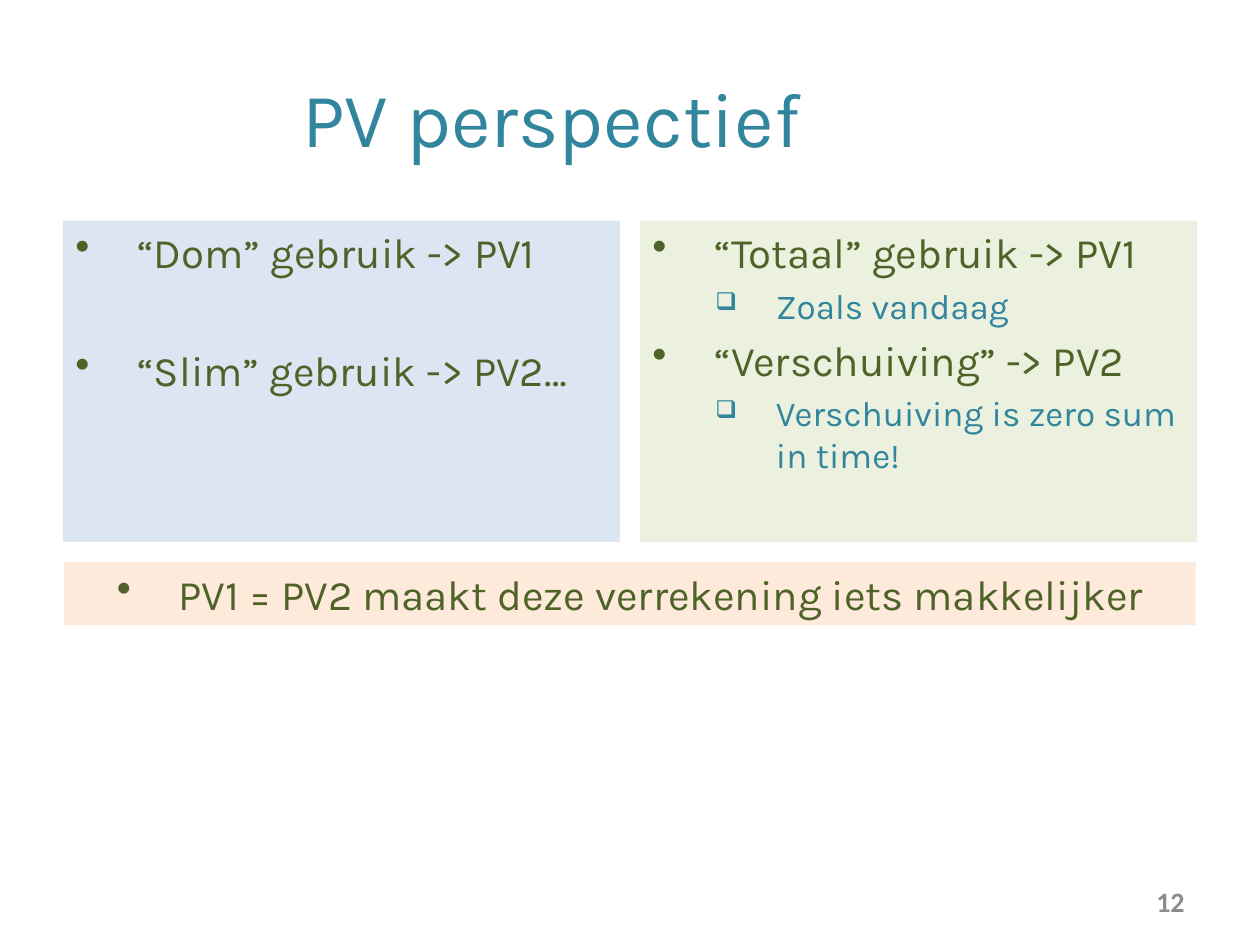
from dataclasses import dataclass

from lxml.etree import SubElement
from pptx import Presentation
from pptx.dml.color import RGBColor
from pptx.enum.shapes import MSO_SHAPE
from pptx.enum.text import MSO_ANCHOR, PP_ALIGN
from pptx.oxml.ns import qn
from pptx.util import Inches, Pt

GREEN, TEAL, GREY = "4F6228", "31859C", "8C8C8C"


@dataclass(frozen=True)
class Level:
    symbol: str
    symbol_percent: int
    left: float
    hanging: float
    size: int
    color: str


MAIN = Level("•", 100, 0.49, 0.49, 24, GREEN)
SUB = Level("❑", 70, 0.98, 0.48, 20, TEAL)


@dataclass(frozen=True)
class Item:
    text: str
    level: Level = MAIN
    space_before: float = 0.2  # in line sizes


@dataclass(frozen=True)
class Panel:
    left: float
    top: float
    width: float
    height: float
    fill: str
    items: tuple[Item, ...]
    align: PP_ALIGN = PP_ALIGN.LEFT


COLUMN_TOP, COLUMN_WIDTH, COLUMN_HEIGHT = 1.75, 4.42, 2.55
PANELS = (
    Panel(0.5, COLUMN_TOP, COLUMN_WIDTH, COLUMN_HEIGHT, "DCE6F2", (
        Item("“Dom” gebruik -> PV1"),
        Item("“Slim” gebruik -> PV2…", space_before=1.6),
    )),
    Panel(5.08, COLUMN_TOP, COLUMN_WIDTH, COLUMN_HEIGHT, "EBF1DE", (
        Item("“Totaal” gebruik -> PV1"),
        Item("Zoals vandaag", SUB),
        Item("“Verschuiving” -> PV2"),
        Item("Verschuiving is zero sum in time!", SUB),
    )),
    Panel(0.51, 4.46, 8.98, 0.5, "FDEADA", (
        Item("PV1 = PV2 maakt deze verrekening iets makkelijker"),
    ), PP_ALIGN.CENTER),
)


def rgb(color: str) -> RGBColor:
    return RGBColor.from_string(color)


def set_font(paragraph, name: str, size: int, color: str, bold: bool = False) -> None:
    font = paragraph.font
    font.name, font.size, font.bold = name, Pt(size), bold
    font.color.rgb = rgb(color)


def add_bullet(paragraph, level: Level) -> None:
    properties = paragraph._p.get_or_add_pPr()
    properties.set("marL", str(Inches(level.left)))
    properties.set("indent", str(-Inches(level.hanging)))
    bullet_color = SubElement(properties, qn("a:buClr"))
    SubElement(bullet_color, qn("a:srgbClr"), val=level.color)
    SubElement(properties, qn("a:buSzPct"), val=str(level.symbol_percent * 1000))
    SubElement(properties, qn("a:buChar"), char=level.symbol)


def add_panel(slide, panel: Panel) -> None:
    box = slide.shapes.add_shape(
        MSO_SHAPE.RECTANGLE, Inches(panel.left), Inches(panel.top),
        Inches(panel.width), Inches(panel.height))
    box.shadow.inherit = False
    box.fill.solid()
    box.fill.fore_color.rgb = rgb(panel.fill)
    box.line.fill.background()
    frame = box.text_frame
    frame.word_wrap = True
    frame.vertical_anchor = MSO_ANCHOR.TOP
    for index, item in enumerate(panel.items):
        paragraph = frame.add_paragraph() if index else frame.paragraphs[0]
        paragraph.text = item.text
        paragraph.alignment = panel.align
        if index:
            paragraph.space_before = Pt(item.space_before * item.level.size)
        if item.level is SUB:
            paragraph.level = 1
        add_bullet(paragraph, item.level)
        set_font(paragraph, "Karla", item.level.size, item.level.color)


def add_label(slide, text: str, left: float, top: float, width: float,
              height: float, align: PP_ALIGN):
    """Add a vertically centred one-line text and return its paragraph."""
    frame = slide.shapes.add_textbox(
        Inches(left), Inches(top), Inches(width), Inches(height)).text_frame
    frame.word_wrap = True
    frame.vertical_anchor = MSO_ANCHOR.MIDDLE
    paragraph = frame.paragraphs[0]
    paragraph.text = text
    paragraph.alignment = align
    return paragraph


def main() -> None:
    presentation = Presentation()
    presentation.slide_width, presentation.slide_height = Inches(10), Inches(7.5)
    slide = presentation.slides.add_slide(presentation.slide_layouts[6])

    title = add_label(slide, "PV perspectief", 0.5, 0.3, 7.02, 1.25, PP_ALIGN.CENTER)
    title._p.get_or_add_pPr().set("marL", str(Inches(0.74)))
    set_font(title, "Karla", 44, TEAL)

    for panel in PANELS:
        add_panel(slide, panel)

    page_number = add_label(slide, "12", 7.17, 6.95, 2.33, 0.4, PP_ALIGN.RIGHT)
    set_font(page_number, "Calibri", 16, GREY, bold=True)

    presentation.save("out.pptx")


if __name__ == "__main__":
    main()
